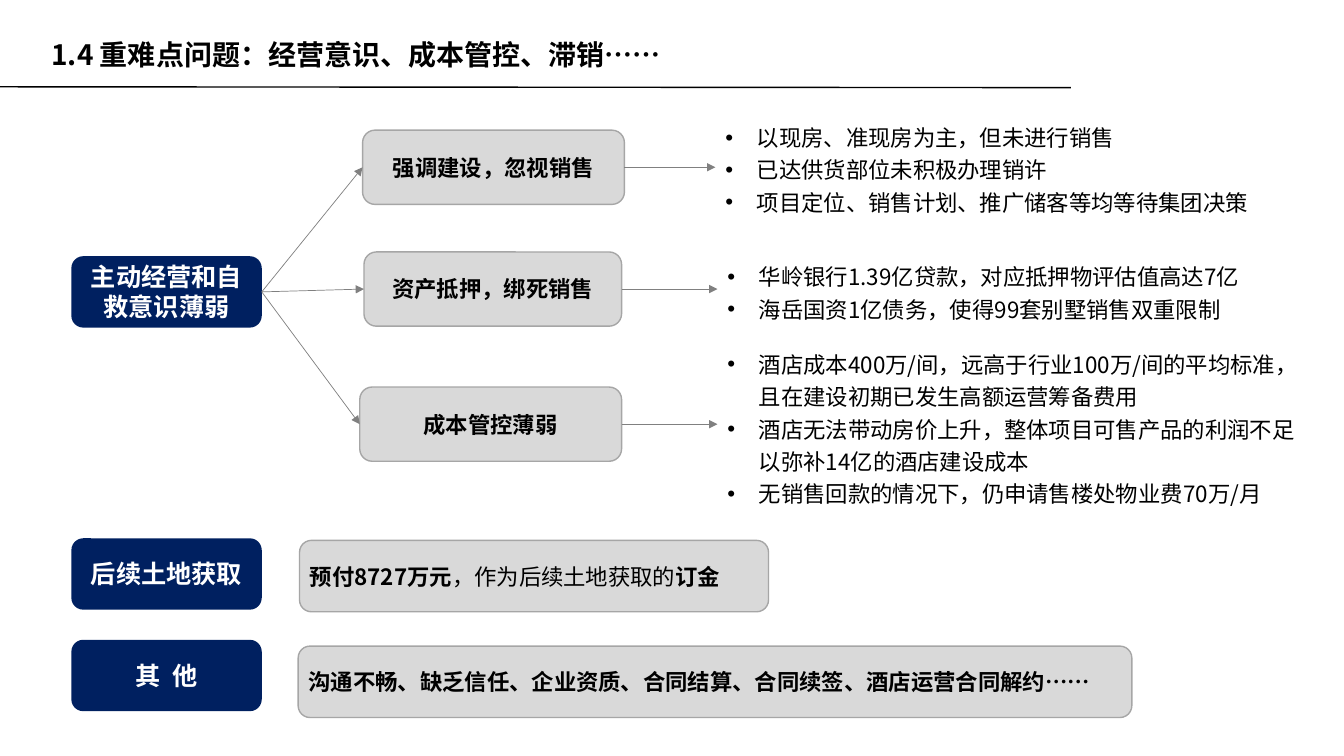
from lxml.etree import SubElement
from pptx import Presentation
from pptx.dml.color import RGBColor
from pptx.enum.shapes import MSO_CONNECTOR, MSO_SHAPE
from pptx.enum.text import MSO_ANCHOR, PP_ALIGN
from pptx.oxml.ns import qn
from pptx.util import Pt

FONT = "Noto Sans CJK SC"
COLORS = {
    "text": "000000",
    "white": "FFFFFF",
    "navy": "002060",
    "panel": "D9D9D9",
    "border": "A6A6A6",
    "arrow": "808080",
}
LEFT_SITE, RIGHT_SITE = 1, 3

TOPIC_LEFT, TOPIC_WIDTH, TOPIC_HEIGHT = 51, 136, 51
MAIN_TOPIC = ("主动经营和自救意识薄弱", 183)

# Cause, its box, details, their box
CAUSES = [
    ("强调建设，忽视销售", (259, 93, 187, 53),
     ["以现房、准现房为主，但未进行销售",
      "已达供货部位未积极办理销许",
      "项目定位、销售计划、推广储客等均等待集团决策"],
     (511, 81, 408, 77)),
    ("资产抵押，绑死销售", (260, 180, 184, 53),
     ["华岭银行1.39亿贷款，对应抵押物评估值高达7亿",
      "海岳国资1亿债务，使得99套别墅销售双重限制"],
     (512.5, 180.5, 408, 54)),
    ("成本管控薄弱", (257, 276.5, 187, 53),
     ["酒店成本400万/间，远高于行业100万/间的平均标准，且在建设初期已发生高额运营筹备费用",
      "酒店无法带动房价上升，整体项目可售产品的利润不足以弥补14亿的酒店建设成本",
      "无销售回款的情况下，仍申请售楼处物业费70万/月"],
     (512.5, 243, 426, 124)),
]

# Topic, its top, remark as (text, bold) runs, remark box
OTHER_TOPICS = [
    ("后续土地获取", 384.5,
     [("预付8727万元", True), ("，作为后续土地获取的", False), ("订金", True)],
     (214, 386, 335, 51)),
    ("其  他", 457,
     [("沟通不畅、缺乏信任、企业资质、合同结算、合同续签、酒店运营合同解约……", True)],
     (213, 461.5, 595.5, 51)),
]


def color(name):
    return RGBColor.from_string(COLORS[name])


class SlideBuilder:
    def __init__(self, slide):
        self.slide = slide

    def add_run(self, paragraph, text, size, color_name="text", bold=False):
        run = paragraph.add_run()
        run.text = text
        run.font.size = Pt(size)
        run.font.bold = bold
        run.font.name = FONT
        run.font.color.rgb = color(color_name)
        east_asian = SubElement(run.font._element, qn("a:ea"))
        east_asian.set("typeface", FONT)

    def title(self, text, box):
        shape = self.slide.shapes.title
        shape.left, shape.top, shape.width, shape.height = map(Pt, box)
        shape.text_frame.vertical_anchor = MSO_ANCHOR.TOP
        paragraph = shape.text_frame.paragraphs[0]
        paragraph.alignment = PP_ALIGN.LEFT
        self.add_run(paragraph, text, 20, bold=True)

    def rounded_box(self, box, fill, border=None):
        shape = self.slide.shapes.add_shape(MSO_SHAPE.ROUNDED_RECTANGLE, *map(Pt, box))
        shape.shadow.inherit = False
        shape.fill.solid()
        shape.fill.fore_color.rgb = color(fill)
        if border:
            shape.line.color.rgb = color(border)
            shape.line.width = Pt(1)
        else:
            shape.line.fill.background()
        shape.text_frame.word_wrap = True
        shape.text_frame.vertical_anchor = MSO_ANCHOR.MIDDLE
        return shape

    def topic(self, text, top):
        shape = self.rounded_box((TOPIC_LEFT, top, TOPIC_WIDTH, TOPIC_HEIGHT), "navy")
        paragraph = shape.text_frame.paragraphs[0]
        paragraph.alignment = PP_ALIGN.CENTER
        paragraph.line_spacing = Pt(21.5)
        self.add_run(paragraph, text, 18, "white", bold=True)
        return shape

    def panel(self, runs, box, alignment):
        shape = self.rounded_box(box, "panel", "border")
        shape.text_frame.margin_left = shape.text_frame.margin_right = Pt(5)
        paragraph = shape.text_frame.paragraphs[0]
        paragraph.alignment = alignment
        for text, bold in runs:
            self.add_run(paragraph, text, 16, bold=bold)
        return shape

    def bullets(self, items, box):
        frame = self.slide.shapes.add_textbox(*map(Pt, box)).text_frame
        frame.word_wrap = True
        for index, item in enumerate(items):
            paragraph = frame.paragraphs[0] if index == 0 else frame.add_paragraph()
            paragraph.line_spacing = Pt(23.2)
            properties = paragraph._p.get_or_add_pPr()
            properties.set("marL", str(Pt(22.5)))
            properties.set("indent", str(-Pt(22.5)))
            SubElement(properties, qn("a:buFont")).set("typeface", "Arial")
            SubElement(properties, qn("a:buChar")).set("char", "•")
            self.add_run(paragraph, item, 16)

    def line(self, start, end, color_name, width, arrow=False):
        connector = self.slide.shapes.add_connector(
            MSO_CONNECTOR.STRAIGHT, *map(Pt, start + end))
        connector.line.color.rgb = color(color_name)
        connector.line.width = Pt(width)
        if arrow:
            SubElement(connector.line._get_or_add_ln(), qn("a:tailEnd")).set("type", "triangle")
        SubElement(connector._element.spPr, qn("a:effectLst"))
        return connector


def main():
    presentation = Presentation()
    presentation.slide_width, presentation.slide_height = Pt(960), Pt(540)
    slide = presentation.slides.add_slide(presentation.slide_layouts[5])
    builder = SlideBuilder(slide)

    builder.line((0, 62), (765, 62.6), "text", 1)
    builder.title("1.4 重难点问题：经营意识、成本管控、滞销……", (29.5, 23, 779, 39.5))

    main_topic = builder.topic(*MAIN_TOPIC)
    topic_right = (TOPIC_LEFT + TOPIC_WIDTH, MAIN_TOPIC[1] + TOPIC_HEIGHT / 2)
    for cause, box, details, details_box in CAUSES:
        panel = builder.panel([(cause, True)], box, PP_ALIGN.CENTER)
        left, top, width, height = box
        middle = top + height / 2
        incoming = builder.line(topic_right, (left, middle), "arrow", 0.5, arrow=True)
        incoming.begin_connect(main_topic, RIGHT_SITE)
        incoming.end_connect(panel, LEFT_SITE)
        outgoing = builder.line((left + width, middle), (details_box[0], middle),
                                "arrow", 0.5, arrow=True)
        outgoing.begin_connect(panel, RIGHT_SITE)
        builder.bullets(details, details_box)

    for topic, top, remark, box in OTHER_TOPICS:
        builder.topic(topic, top)
        builder.panel(remark, box, PP_ALIGN.LEFT)

    presentation.save("out.pptx")


if __name__ == "__main__":
    main()
